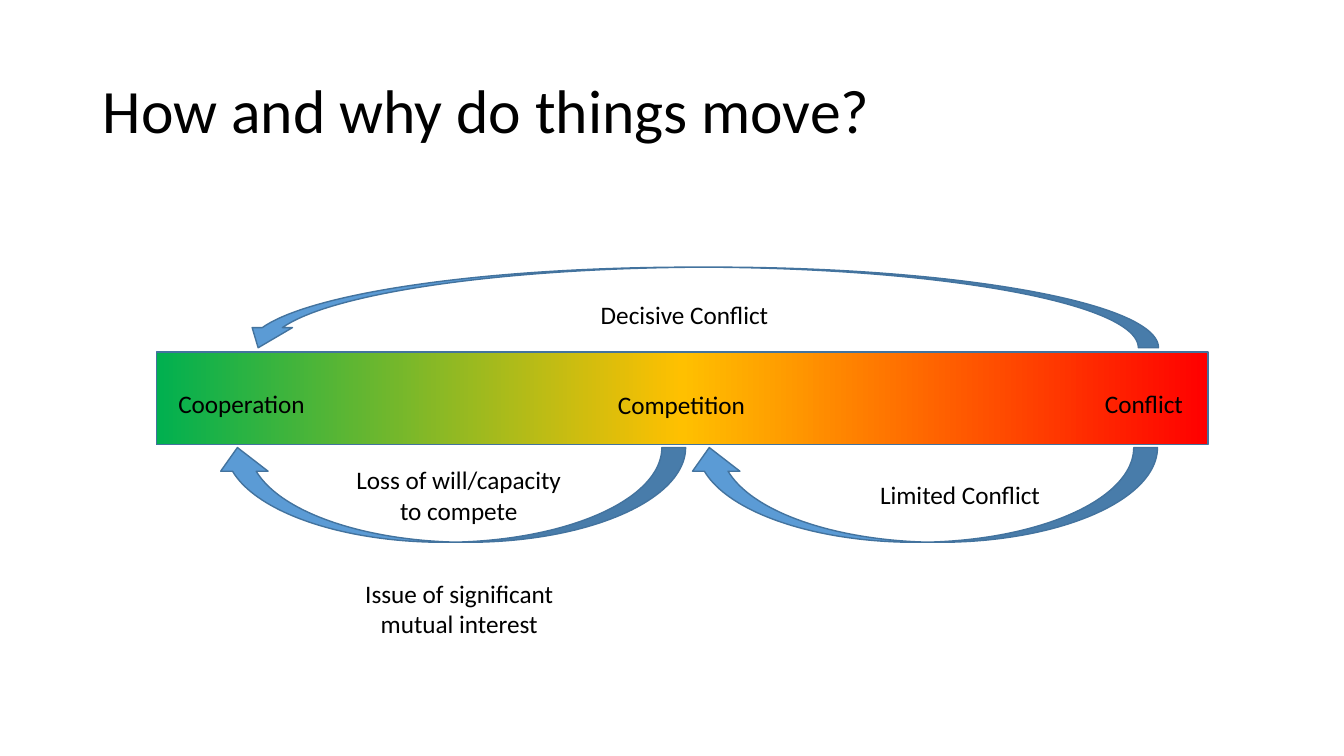
import copy
from dataclasses import dataclass

import pptx
import pptx.dml.color
import pptx.enum.shapes
import pptx.enum.text
import pptx.oxml.ns
import pptx.util

Inches = pptx.util.Inches
RGBColor = pptx.dml.color.RGBColor
ShapeType = pptx.enum.shapes.MSO_SHAPE
Anchor = pptx.enum.text.MSO_ANCHOR
Align = pptx.enum.text.PP_ALIGN
AutoSize = pptx.enum.text.MSO_AUTO_SIZE

BLACK = RGBColor(0x00, 0x00, 0x00)
BLUE = RGBColor(0x5B, 0x9B, 0xD5)
OUTLINE = RGBColor(0x43, 0x73, 0x9E)
GREEN = RGBColor(0x00, 0xB0, 0x50)
AMBER = RGBColor(0xFF, 0xC0, 0x00)
RED = RGBColor(0xFF, 0x00, 0x00)


@dataclass(frozen=True)
class Box:
    left: float
    top: float
    width: float
    height: float

    def lengths(self) -> list:
        return [Inches(n) for n in (self.left, self.top, self.width, self.height)]


@dataclass(frozen=True)
class Arrow:
    box: Box
    rotation: float = 0
    flipped: bool = False


@dataclass(frozen=True)
class Label:
    text: str
    box: Box
    wrapped: bool = False


SPECTRUM = Box(1.55, 3.49, 10.43, 0.92)
SPECTRUM_STOPS = [(0, GREEN), (0.5, AMBER), (1, RED)]

LOWER_WIDTH = 4.68
ARROWS = [Arrow(Box(2.12 + i * LOWER_WIDTH, 4.44, LOWER_WIDTH, 0.94), flipped=True)
          for i in range(2)]
ARROWS.append(Arrow(Box(2.36, 2.65, 9.13, 0.8), rotation=180))

LABELS = [
    Label("Cooperation", Box(1.67, 3.8, 1.47, 0.3)),
    Label("Competition", Box(6.03, 3.81, 1.48, 0.3)),
    Label("Conflict", Box(10.86, 3.8, 0.99, 0.3)),
    Label("Limited Conflict", Box(8.63, 4.71, 1.81, 0.4)),
    Label("Decisive Conflict", Box(5.86, 2.92, 1.88, 0.4)),
    Label("Issue of significant mutual interest", Box(3.25, 5.69, 2.61, 0.71), wrapped=True),
    Label("Loss of will/capacity to compete", Box(3.43, 4.56, 2.24, 0.71), wrapped=True),
]


def add_text(slide, text: str, box: Box, *, size: float = 18, wrap: bool = True,
             align=Align.LEFT, anchor=Anchor.TOP, auto_size=AutoSize.SHAPE_TO_FIT_TEXT,
             line_spacing: float = 1.0) -> None:
    frame = slide.shapes.add_textbox(*box.lengths()).text_frame
    frame.word_wrap = wrap
    frame.auto_size = auto_size
    frame.vertical_anchor = anchor
    paragraph = frame.paragraphs[0]
    paragraph.text = text
    paragraph.alignment = align
    paragraph.line_spacing = line_spacing
    paragraph.font.name = "Calibri"
    paragraph.font.size = pptx.util.Pt(size)
    paragraph.font.color.rgb = BLACK


def add_outlined_shape(slide, kind, box: Box):
    shape = slide.shapes.add_shape(kind, *box.lengths())
    shape.shadow.inherit = False
    shape.line.color.rgb = OUTLINE
    shape.line.width = pptx.util.Pt(1)
    return shape


def add_spectrum(slide) -> None:
    shape = add_outlined_shape(slide, ShapeType.RECTANGLE, SPECTRUM)
    shape.fill.gradient()
    shape.fill.gradient_angle = 0
    # The default gradient has two stops; add the middle one
    stop_list = next(shape._element.spPr.iter(pptx.oxml.ns.qn("a:gsLst")))
    stop_list.append(copy.deepcopy(stop_list[0]))
    for stop, (position, color) in zip(shape.fill.gradient_stops, SPECTRUM_STOPS):
        stop.position = position
        stop.color.rgb = color


def add_arrow(slide, arrow: Arrow) -> None:
    shape = add_outlined_shape(slide, ShapeType.CURVED_UP_ARROW, arrow.box)
    shape.fill.solid()
    shape.fill.fore_color.rgb = BLUE
    shape.rotation = arrow.rotation
    if arrow.flipped:
        shape._element.spPr.xfrm.set("flipH", "1")


def main() -> None:
    presentation = pptx.Presentation()
    presentation.slide_width = Inches(13.33)
    presentation.slide_height = Inches(7.5)
    slide = presentation.slides.add_slide(presentation.slide_layouts[6])

    # Title
    add_text(slide, "How and why do things move?", Box(0.92, 0.4, 11.5, 1.45), size=44,
             anchor=Anchor.MIDDLE, auto_size=AutoSize.NONE, line_spacing=0.9)

    # Spectrum bar and the movements along it
    add_spectrum(slide)
    for arrow in ARROWS:
        add_arrow(slide, arrow)

    # Labels
    for label in LABELS:
        add_text(slide, label.text, label.box, wrap=label.wrapped,
                 align=Align.CENTER if label.wrapped else Align.LEFT)

    presentation.save("out.pptx")


if __name__ == "__main__":
    main()
